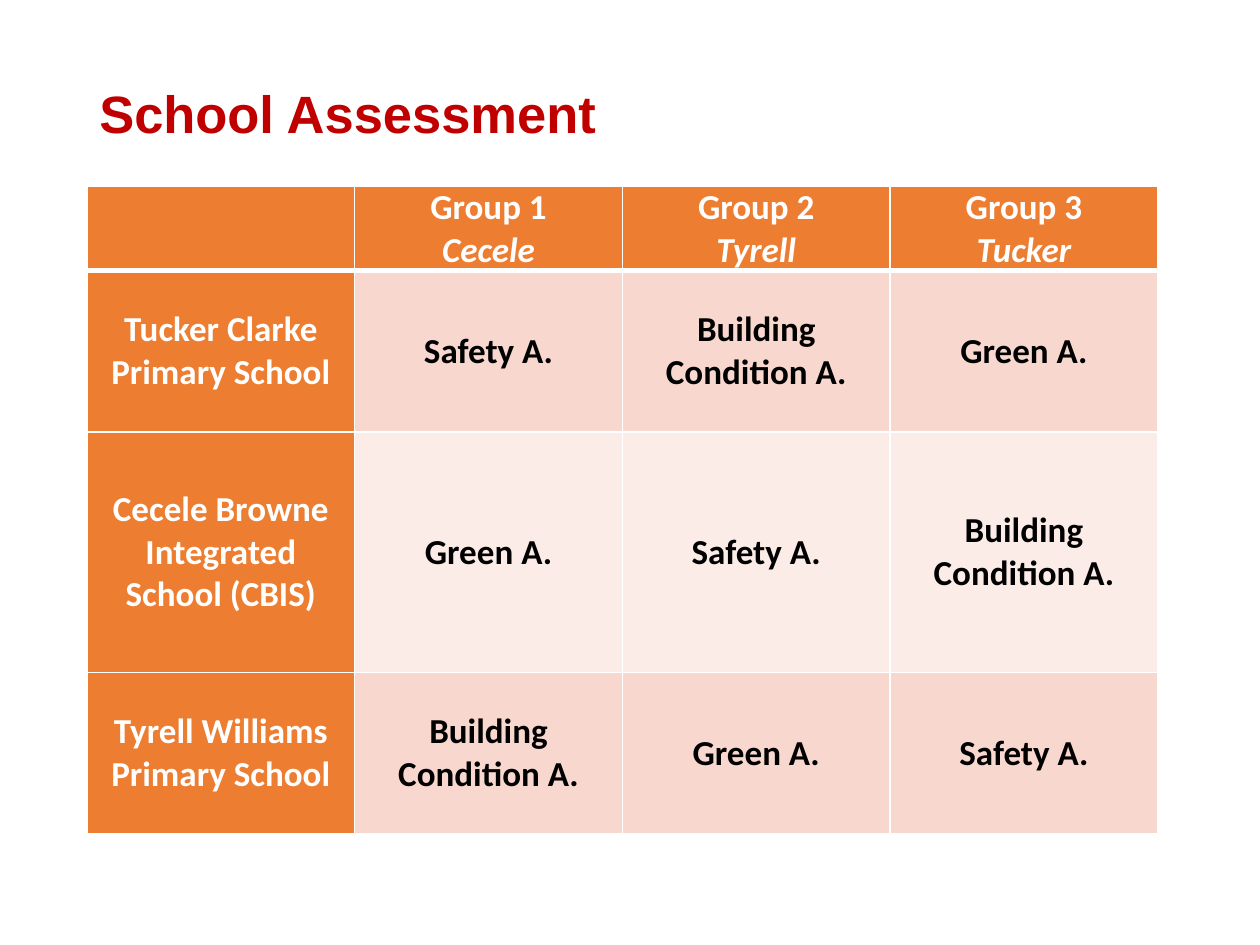
import pptx
import pptx.dml.color
import pptx.enum.text
import pptx.util
from lxml import etree
from pptx.oxml.ns import qn

ORANGE = pptx.dml.color.RGBColor(0xED, 0x7D, 0x31)
PEACH = pptx.dml.color.RGBColor(0xF8, 0xD7, 0xCE)
PALE_PEACH = pptx.dml.color.RGBColor(0xFC, 0xEC, 0xE8)
RED = pptx.dml.color.RGBColor(0xC0, 0x00, 0x00)
WHITE = pptx.dml.color.RGBColor(0xFF, 0xFF, 0xFF)
BLACK = pptx.dml.color.RGBColor(0x00, 0x00, 0x00)

SAFETY, BUILDING, GREEN = "Safety A.", "Building Condition A.", "Green A."
SCHEDULE = [
    ["", "Group 1\nCecele", "Group 2\nTyrell", "Group 3\nTucker"],
    ["Tucker Clarke Primary School", SAFETY, BUILDING, GREEN],
    ["Cecele Browne Integrated School (CBIS)", GREEN, SAFETY, BUILDING],
    ["Tyrell Williams Primary School", BUILDING, GREEN, SAFETY],
]
LEFT, WIDTH = pptx.util.Inches(0.69), pptx.util.Inches(8.5)
ROW_HEIGHTS = [pptx.util.Inches(h) for h in (0.64, 1.28, 1.91, 1.28)]


def add_run(paragraph, text, font_name, size, color, italic=False):
    run = paragraph.add_run()
    run.text = text
    run.font.name = font_name
    run.font.size = pptx.util.Pt(size)
    run.font.bold = True
    run.font.italic = italic
    run.font.color.rgb = color


def add_border(cell, side, points):
    """Draw a white line on one side (L, R, T or B); call before filling the cell."""
    line = etree.SubElement(cell._tc.get_or_add_tcPr(), qn(f"a:ln{side}"),
                            w=str(pptx.util.Pt(points)))
    fill = etree.SubElement(line, qn("a:solidFill"))
    etree.SubElement(fill, qn("a:srgbClr"), val=str(WHITE))


deck = pptx.Presentation()
deck.slide_width = pptx.util.Inches(10)
deck.slide_height = pptx.util.Inches(7.5)
slide = deck.slides.add_slide(deck.slide_layouts[6])

heading = slide.shapes.add_textbox(LEFT, pptx.util.Inches(0.51),
                                   WIDTH, pptx.util.Inches(0.69)).text_frame
heading.word_wrap = True
heading.vertical_anchor = pptx.enum.text.MSO_ANCHOR.BOTTOM
heading.paragraphs[0].line_spacing = 0.9
add_run(heading.paragraphs[0], "School Assessment", "Arial", 30, RED)

schedule = slide.shapes.add_table(len(SCHEDULE), len(SCHEDULE[0]), LEFT,
                                  pptx.util.Inches(1.48), WIDTH, sum(ROW_HEIGHTS)).table
for row, height in zip(schedule.rows, ROW_HEIGHTS):
    row.height = height

for r, entries in enumerate(SCHEDULE):
    for c, entry in enumerate(entries):
        cell = schedule.cell(r, c)
        is_heading = r == 0 or c == 0
        cell.margin_left = cell.margin_right = pptx.util.Inches(0.07)
        cell.margin_top = cell.margin_bottom = 0
        cell.vertical_anchor = pptx.enum.text.MSO_ANCHOR.MIDDLE

        for side in "LRTB":
            under_header = (r, side) in ((0, "B"), (1, "T"))
            add_border(cell, side, 3 if under_header else 1)
        cell.fill.solid()
        cell.fill.fore_color.rgb = ORANGE if is_heading else PEACH if r % 2 else PALE_PEACH

        for n, text in enumerate(entry.splitlines()):
            frame = cell.text_frame
            paragraph = frame.add_paragraph() if n else frame.paragraphs[0]
            paragraph.alignment = pptx.enum.text.PP_ALIGN.CENTER
            add_run(paragraph, text, "Calibri", 20, WHITE if is_heading else BLACK, n == 1)

deck.save("out.pptx")
